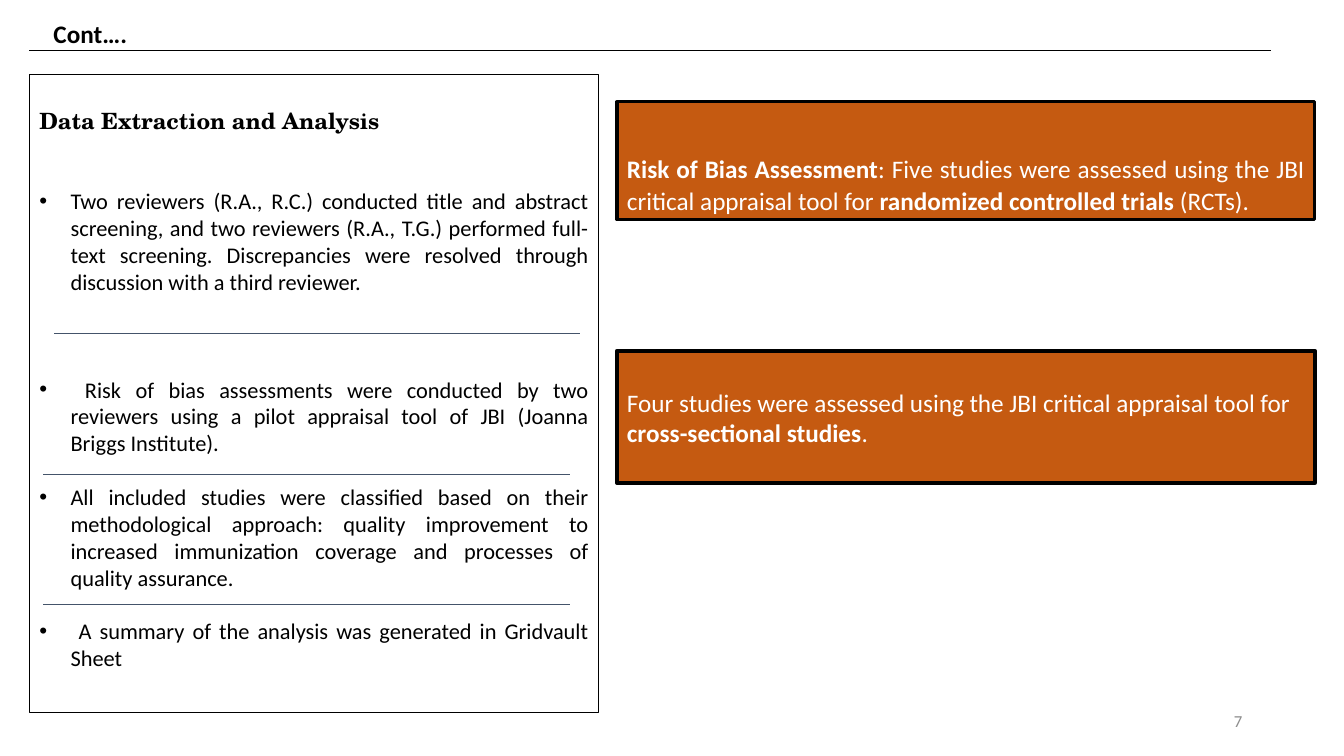
from dataclasses import dataclass

from lxml import etree
from pptx import Presentation
from pptx.dml.color import RGBColor
from pptx.enum.shapes import MSO_CONNECTOR as Connector
from pptx.enum.shapes import MSO_SHAPE as Shape
from pptx.enum.text import MSO_ANCHOR as Anchor
from pptx.enum.text import MSO_AUTO_SIZE as AutoSize
from pptx.enum.text import PP_ALIGN as Align
from pptx.oxml.ns import qn
from pptx.util import Inches, Pt

BLACK = RGBColor(0x00, 0x00, 0x00)
WHITE = RGBColor(0xFF, 0xFF, 0xFF)
ORANGE = RGBColor(0xC5, 0x5A, 0x11)
SLATE = RGBColor(0x44, 0x54, 0x6A)
GRAY = RGBColor(0x8C, 0x8C, 0x8C)

BODY_FONT = "Calibri"
HEADING_FONT = "TeX Gyre Schola"
BODY_LINE = 19.2  # height of one 16 pt line, in points


@dataclass(frozen=True)
class Span:
    text: str
    bold: bool = False


@dataclass(frozen=True)
class Bullet:
    text: str
    lines_before: int


@dataclass(frozen=True)
class Card:
    top: float
    height: float
    border: float
    top_inset: float
    align: Align
    line_spacing: float
    spans: tuple[Span, ...]


@dataclass(frozen=True)
class Rule:
    left: float
    right: float
    top: float
    color: RGBColor = SLATE


BULLETS = (
    Bullet("Two reviewers (R.A., R.C.) conducted title and abstract screening, "
           "and two reviewers (R.A., T.G.) performed full-text screening. "
           "Discrepancies were resolved through discussion with a third reviewer.", 2),
    Bullet(" Risk of bias assessments were conducted by two reviewers using a "
           "pilot appraisal tool of JBI (Joanna Briggs Institute).", 3),
    Bullet("All included studies were classified based on their methodological "
           "approach: quality improvement to increased immunization coverage and "
           "processes of quality assurance.", 1),
    Bullet(" A summary of the analysis was generated in Gridvault Sheet", 1),
)

CARDS = (
    Card(1.01, 1.17, 2.25, 0.49, Align.JUSTIFY, 1.07, (
        Span("Risk of Bias Assessment", True),
        Span(": Five studies were assessed using the JBI critical appraisal tool for "),
        Span("randomized controlled trials ", True),
        Span("(RCTs)."),
    )),
    Card(3.48, 1.31, 3, 0.36, Align.LEFT, 1.0, (
        Span("Four studies were assessed using the JBI critical appraisal tool for "),
        Span("cross-sectional studies", True),
        Span("."),
    )),
)

RULES = (
    Rule(0.29, 12.61, 0.5, BLACK),
    Rule(0.54, 5.75, 3.31),
    Rule(0.43, 5.65, 4.71),
    Rule(0.43, 5.65, 6),
)


def place(shape, left: float, top: float, width: float, height: float) -> None:
    shape.left, shape.top = Inches(left), Inches(top)
    shape.width, shape.height = Inches(width), Inches(height)


def prepare_frame(shape, top_inset: float = 0.05, anchor: Anchor = Anchor.TOP):
    frame = shape.text_frame
    frame.word_wrap = True
    frame.auto_size = AutoSize.NONE
    frame.vertical_anchor = anchor
    frame.margin_left = frame.margin_right = Inches(0.1)
    frame.margin_top, frame.margin_bottom = Inches(top_inset), Inches(0.05)
    return frame


def add_run(paragraph, text: str, size: float, color: RGBColor,
            bold: bool = False, font: str = BODY_FONT) -> None:
    run = paragraph.add_run()
    run.text = text
    run.font.name, run.font.size = font, Pt(size)
    run.font.bold = bold
    run.font.color.rgb = color


def set_bullet(paragraph, character: str = "") -> None:
    """Give the paragraph a hanging bullet, or none if no character is given."""
    properties = paragraph._p.get_or_add_pPr()
    indent = Inches(0.31) if character else 0
    properties.set("marL", str(indent))
    properties.set("indent", str(-indent))
    if character:
        font = etree.SubElement(properties, qn("a:buFont"))
        font.set("typeface", "Arial")
        bullet = etree.SubElement(properties, qn("a:buChar"))
        bullet.set("char", character)
    else:
        etree.SubElement(properties, qn("a:buNone"))


def fill_title(title) -> None:
    place(title, 0.43, 0.13, 1.17, 0.4)
    paragraph = prepare_frame(title).paragraphs[0]
    paragraph.alignment = Align.LEFT
    add_run(paragraph, "Cont….", 18, BLACK, bold=True)


def fill_body(body) -> None:
    place(body, 0.29, 0.74, 5.65, 6.33)
    body.line.color.rgb = BLACK
    body.line.width = Pt(0.75)
    frame = prepare_frame(body, top_inset=0.32)
    heading = frame.paragraphs[0]
    heading.alignment = Align.JUSTIFY
    heading.space_before = Pt(0)
    set_bullet(heading)
    add_run(heading, "Data Extraction and Analysis", 16, BLACK, True, HEADING_FONT)
    for bullet in BULLETS:
        paragraph = frame.add_paragraph()
        paragraph.alignment = Align.JUSTIFY
        paragraph.space_before = Pt(bullet.lines_before * BODY_LINE)
        set_bullet(paragraph, "•")
        add_run(paragraph, bullet.text, 16, BLACK)


def add_card(slide, card: Card) -> None:
    shape = slide.shapes.add_shape(Shape.RECTANGLE, Inches(6.12), Inches(card.top),
                                   Inches(6.92), Inches(card.height))
    shape.shadow.inherit = False
    shape.fill.solid()
    shape.fill.fore_color.rgb = ORANGE
    shape.line.color.rgb = BLACK
    shape.line.width = Pt(card.border)
    paragraph = prepare_frame(shape, card.top_inset).paragraphs[0]
    paragraph.alignment = card.align
    paragraph.line_spacing = card.line_spacing
    for span in card.spans:
        add_run(paragraph, span.text, 18, WHITE, span.bold)


def add_rule(slide, rule: Rule) -> None:
    line = slide.shapes.add_connector(Connector.STRAIGHT, Inches(rule.left), Inches(rule.top),
                                      Inches(rule.right), Inches(rule.top))
    line.line.color.rgb = rule.color
    line.line.width = Pt(0.5)
    etree.SubElement(line._element.spPr, qn("a:effectLst"))


def add_page_number(slide) -> None:
    box = slide.shapes.add_textbox(Inches(9.42), Inches(6.95), Inches(3), Inches(0.4))
    paragraph = prepare_frame(box, anchor=Anchor.MIDDLE).paragraphs[0]
    paragraph.alignment = Align.RIGHT
    add_run(paragraph, "7", 12, GRAY)


def main() -> None:
    presentation = Presentation()
    presentation.slide_width, presentation.slide_height = Inches(13.33), Inches(7.5)
    slide = presentation.slides.add_slide(presentation.slide_layouts[1])
    fill_title(slide.shapes.title)
    fill_body(slide.placeholders[1])
    for card in CARDS:
        add_card(slide, card)
    for rule in RULES:
        add_rule(slide, rule)
    add_page_number(slide)
    presentation.save("out.pptx")


if __name__ == "__main__":
    main()
